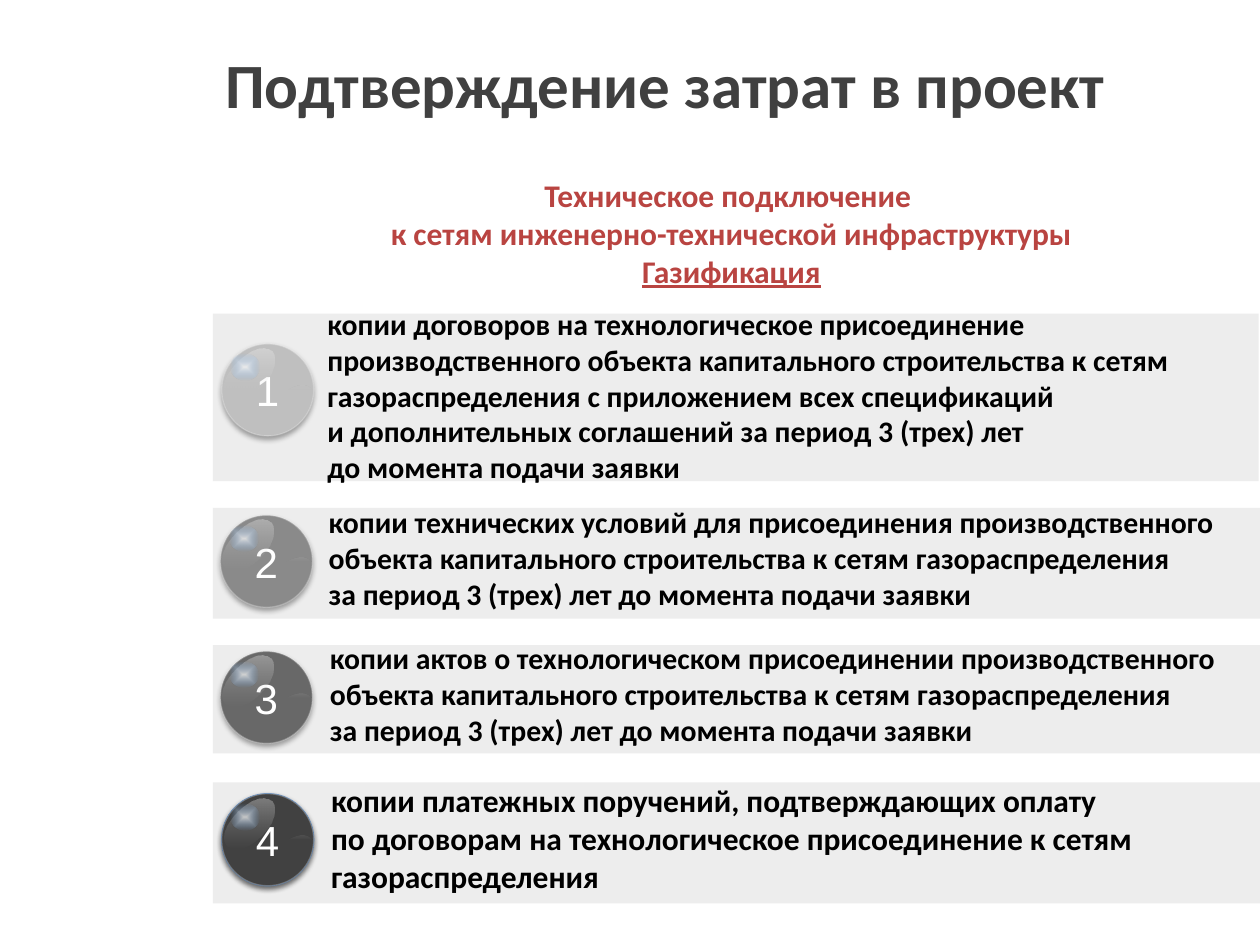
from math import cos, radians, sin

from lxml.etree import SubElement
from pptx import Presentation
from pptx.dml.color import RGBColor
from pptx.enum.shapes import MSO_SHAPE
from pptx.enum.text import MSO_ANCHOR, MSO_AUTO_SIZE, PP_ALIGN
from pptx.oxml.ns import qn
from pptx.util import Inches, Pt

COLORS = {
    "title": "404040", "heading": "B94441", "text": "000000", "white": "FFFFFF",
    "bar": "A6A6A6", "shade": "B6B6B6", "glint": "67ABF5", "shadow": "000000",
    "rim": "4B7EBC", "blue_dark": "2F5F99", "blue": "3D7CC7", "blue_light": "3A7CCB",
    "ball_1": "BFBFBF", "ball_2": "8A8A8A", "ball_3": "686868", "ball_4": "414141",
}

# Bar top, width and height; ball offset from the first ball;
# text box; text size; wording
ITEMS = [
    ((2.49, 8.3, 1.33), (0, 0), (2.5, 2.38, 7.49, 1.53), 17,
     "копии договоров на технологическое присоединение производственного объекта "
     "капитального строительства к сетям газораспределения с приложением всех "
     "спецификаций \nи дополнительных соглашений за период 3 (трех) лет \n"
     "до момента подачи заявки"),
    ((4.03, 8.31, 0.88), (-0.01, 1.36), (2.51, 3.95, 7.49, 0.96), 17,
     "копии технических условий для присоединения производственного объекта "
     "капитального строительства к сетям газораспределения \n"
     "за период 3 (трех) лет до момента подачи заявки"),
    ((5.12, 8.31, 0.86), (-0.01, 2.44), (2.52, 5.03, 7.49, 0.96), 17,
     "копии актов о технологическом присоединении производственного объекта "
     "капитального строительства к сетям газораспределения \n"
     "за период 3 (трех) лет до момента подачи заявки"),
    ((6.21, 8.31, 0.96), (0, 3.57), (2.53, 6.15, 7.52, 1.01), 18,
     "копии платежных поручений, подтверждающих оплату \n"
     "по договорам на технологическое присоединение к сетям газораспределения"),
]

# Reflections on the first ball: start point, then cubic curves
UPPER_REFLECTION = [
    (2.15, 2.76), (2.11, 2.76), (2.13, 2.82), (2.12, 2.85),
    (2.11, 2.88), (2.03, 2.88), (2.07, 2.93), (2.08, 2.99), (2.32, 3.07), (2.34, 3.15),
    (2.36, 3.22), (2.34, 3.23), (2.37, 3.22), (2.39, 3.21), (2.47, 3.16), (2.47, 3.1),
    (2.47, 3.03), (2.42, 2.9), (2.37, 2.85), (2.31, 2.79), (2.19, 2.76), (2.15, 2.76),
]
LOWER_REFLECTION = [
    (2, 2.93), (1.98, 2.94), (1.91, 2.98), (1.87, 3),
    (1.84, 3.03), (1.8, 3.05), (1.79, 3.09), (1.77, 3.12), (1.79, 3.18), (1.8, 3.22),
    (1.82, 3.26), (1.84, 3.3), (1.88, 3.33), (1.91, 3.37), (1.96, 3.4), (2, 3.41),
    (2.04, 3.43), (2.11, 3.46), (2.12, 3.44), (2.13, 3.42), (2.05, 3.34), (2.04, 3.3),
    (2.03, 3.25), (2.05, 3.2), (2.04, 3.15), (2.03, 3.1), (2, 3.02), (1.99, 2.98),
    (1.99, 2.94), (2.02, 2.93), (2, 2.93),
]


def turn_back(points, center, degrees):
    """Rotate points anticlockwise around a center."""
    cosine, sine = cos(radians(degrees)), sin(radians(degrees))
    offsets = [(x - center[0], y - center[1]) for x, y in points]
    return [(center[0] + x * cosine + y * sine, center[1] - x * sine + y * cosine)
            for x, y in offsets]


class SlideBuilder:
    def __init__(self, slide):
        self.slide = slide
        self.font = "Calibri"
        self.number_font = "Arial"

    def set_alpha(self, solid_fill, percent):
        SubElement(solid_fill[0], qn("a:alpha"), val=str(percent * 1000))

    def gradient(self, shape, stops, angle=None, path=None, focus=None):
        shape.fill.solid()
        solid = shape._element.spPr.find(qn("a:solidFill"))
        fill = SubElement(shape._element.spPr, qn("a:gradFill"), rotWithShape="0")
        stop_list = SubElement(fill, qn("a:gsLst"))
        for position, color, alpha in stops:
            stop = SubElement(stop_list, qn("a:gs"), pos=str(position * 1000))
            value = SubElement(stop, qn("a:srgbClr"), val=COLORS[color])
            SubElement(value, qn("a:alpha"), val=str(alpha * 1000))
        if path:
            path_node = SubElement(fill, qn("a:path"), path=path)
            edges = {side: str(v * 1000) for side, v in zip("ltrb", focus)}
            SubElement(path_node, qn("a:fillToRect"), edges)
        else:
            SubElement(fill, qn("a:lin"), ang=str(angle * 60000), scaled="0")
        solid.getparent().replace(solid, fill)

    def drop_shadow(self, shape):
        effects = shape._element.spPr.find(qn("a:effectLst"))
        shadow = SubElement(effects, qn("a:outerShdw"), blurRad="40000", dist="23000",
                            dir="5400000", rotWithShape="0")
        color = SubElement(shadow, qn("a:srgbClr"), val=COLORS["shadow"])
        SubElement(color, qn("a:alpha"), val="35000")

    def plain_shape(self, shapes, kind, left, top, width, height, rotation=0):
        shape = shapes.add_shape(kind, Inches(left), Inches(top), Inches(width), Inches(height))
        shape.shadow.inherit = False
        shape.line.fill.background()
        shape.rotation = rotation
        return shape

    def style(self, paragraph, name, size, color, bold=True, align=PP_ALIGN.LEFT):
        paragraph.alignment = align
        font = paragraph.font
        font.name, font.size, font.bold = name, Pt(size), bold
        font.color.rgb = RGBColor.from_string(COLORS[color])

    def text(self, box, lines, size, color, align=PP_ALIGN.LEFT, anchor=MSO_ANCHOR.TOP):
        frame = self.slide.shapes.add_textbox(*map(Inches, box)).text_frame
        frame.word_wrap = True
        frame.vertical_anchor = anchor
        if anchor == MSO_ANCHOR.TOP:
            frame.auto_size = MSO_AUTO_SIZE.SHAPE_TO_FIT_TEXT
        for index, line in enumerate(lines):
            paragraph = frame.add_paragraph() if index else frame.paragraphs[0]
            paragraph.text = line
            self.style(paragraph, self.font, size, color, align=align)
        return frame

    def bar(self, top, width, height):
        bar = self.plain_shape(self.slide.shapes, MSO_SHAPE.RECTANGLE, 1.69, top, width, height)
        bar.fill.solid()
        bar.fill.fore_color.rgb = RGBColor.from_string(COLORS["bar"])
        self.set_alpha(bar._element.spPr.find(qn("a:solidFill")), 20)

    def rim(self, left, top):
        rim = self.plain_shape(self.slide.shapes, MSO_SHAPE.OVAL, left, top, 0.73, 0.73)
        self.gradient(rim, [(0, "blue_dark", 100), (80, "blue", 100),
                            (100, "blue_light", 100)], angle=270)
        rim.line.color.rgb = RGBColor.from_string(COLORS["rim"])
        rim.line.width = Pt(0.75)
        self.drop_shadow(rim)

    def reflection(self, shapes, points, center, rotation, dx, dy):
        outline = [(x + dx, y + dy) for x, y in turn_back(points, center, rotation)]
        builder = shapes.build_freeform(*outline[0], scale=Inches(1))
        builder.add_line_segments(outline[1:], close=True)
        shape = builder.convert_to_shape()
        # Join every three segments into one cubic curve
        segments = list(shape._element.spPr.iter(qn("a:lnTo")))
        for start in range(0, len(segments), 3):
            curve = SubElement(segments[start].getparent(), qn("a:cubicBezTo"))
            segments[start].addprevious(curve)
            for segment in segments[start:start + 3]:
                curve.append(segment[0])
                segment.getparent().remove(segment)
        shape.shadow.inherit = False
        shape.line.fill.background()
        shape.rotation = rotation
        return shape

    def ball(self, number, dx, dy):
        shapes = self.slide.shapes.add_group_shape().shapes
        # Numbered sphere
        ball = self.plain_shape(shapes, MSO_SHAPE.OVAL, 1.76 + dx, 2.73 + dy, 0.73, 0.73)
        ball.fill.solid()
        ball.fill.fore_color.rgb = RGBColor.from_string(COLORS[f"ball_{number}"])
        ball.line.color.rgb = RGBColor.from_string(COLORS["white"])
        ball.line.width = Pt(0.75)
        self.set_alpha(ball.line._ln.find(qn("a:solidFill")), 25)
        self.drop_shadow(ball)
        ball.text_frame.vertical_anchor = MSO_ANCHOR.MIDDLE
        paragraph = ball.text_frame.paragraphs[0]
        paragraph.text = str(number)
        self.style(paragraph, self.number_font, 24, "white", False, PP_ALIGN.CENTER)
        # Upper sheen and glint
        sheen = self.plain_shape(shapes, MSO_SHAPE.OVAL, 1.73 + dx, 2.83 + dy, 0.5, 0.27, 315)
        self.gradient(sheen, [(0, "white", 33), (100, "shade", 0)], angle=90)
        glint = self.plain_shape(shapes, MSO_SHAPE.OVAL, 1.83 + dx, 2.81 + dy, 0.23, 0.21)
        self.gradient(glint, [(0, "white", 65), (100, "glint", 0)],
                      path="shape", focus=(50, 50, 50, 50))
        # Curved reflections
        upper = self.reflection(shapes, UPPER_REFLECTION, (2.25, 3), 90, dx, dy)
        self.gradient(upper, [(50, "white", 0), (74, "white", 19), (100, "white", 0)],
                      path="circle", focus=(100, 100, 0, 0))
        lower = self.reflection(shapes, LOWER_REFLECTION, (1.96, 3.19), 97.3, dx, dy)
        self.gradient(lower, [(0, "white", 0), (28, "white", 0), (74, "white", 11)], angle=45)
        # Lower sheen
        sheen = self.plain_shape(shapes, MSO_SHAPE.OVAL, 2.04 + dx, 3.13 + dy, 0.5, 0.27, 135)
        self.gradient(sheen, [(0, "white", 33), (20, "shade", 0)], angle=90)


def main():
    presentation = Presentation()
    presentation.slide_width, presentation.slide_height = Inches(10), Inches(7.5)
    builder = SlideBuilder(presentation.slides.add_slide(presentation.slide_layouts[6]))

    # Title and heading
    builder.text((1.69, 0.08, 8.23, 1.17), ["Подтверждение затрат в проект"], 36, "title",
                 anchor=MSO_ANCHOR.MIDDLE)
    heading = builder.text(
        (1.73, 1.35, 8.15, 1.01),
        ["Техническое подключение \nк сетям инженерно-технической инфраструктуры",
         "Газификация"], 18, "heading", PP_ALIGN.CENTER)
    heading.paragraphs[1].font.underline = True

    # Bars, then balls, then wording on top
    for bar, *_ in reversed(ITEMS):
        builder.bar(*bar)
    builder.rim(1.76, 6.3)
    for number, (_, offset, *_) in enumerate(ITEMS, 1):
        builder.ball(number, *offset)
    for *_, box, size, wording in ITEMS:
        builder.text(box, [wording], size, "text")

    presentation.save("out.pptx")


if __name__ == "__main__":
    main()
